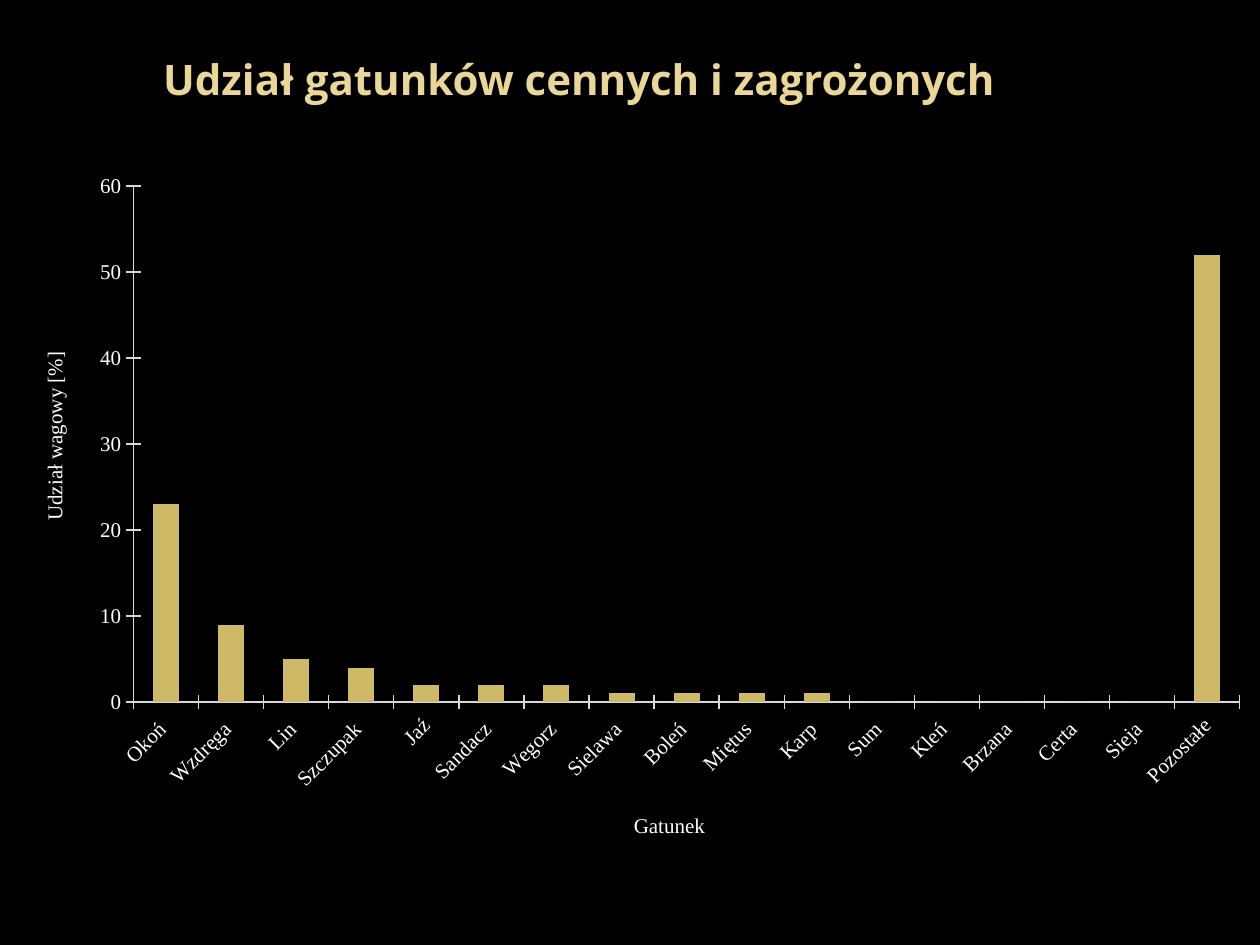
from lxml.etree import SubElement
from pptx import Presentation
from pptx.chart.data import CategoryChartData
from pptx.dml.color import RGBColor
from pptx.enum.chart import XL_CHART_TYPE, XL_TICK_LABEL_POSITION, XL_TICK_MARK
from pptx.enum.text import MSO_ANCHOR, PP_ALIGN
from pptx.oxml import parse_xml
from pptx.oxml.ns import nsdecls, qn
from pptx.util import Inches, Pt

COLORS = {
    "background": "000000",
    "heading": "EAD696",
    "label": "FFFFFF",
    "axis": "D9D9D9",
    "bar": "CEB966",
}
SHARES = {
    "Okoń ": 23, "Wzdręga ": 9, "Lin ": 5, "Szczupak ": 4, "Jaź": 2,
    "Sandacz ": 2, "Wegorz ": 2, "Sielawa ": 1, "Boleń ": 1, "Miętus ": 1,
    "Karp ": 1, "Sum ": 0, "Kleń ": 0, "Brzana ": 0, "Certa ": 0,
    "Sieja ": 0, "Pozostałe": 52,
}


def color(name):
    return RGBColor.from_string(COLORS[name])


def write(frame, text, *, font, size, fill, bold=False, align=None):
    paragraph = frame.paragraphs[0]
    paragraph.alignment = align
    run = paragraph.add_run()
    run.text = text
    run.font.name = font
    run.font.size = Pt(size)
    run.font.bold = bold
    run.font.color.rgb = color(fill)


def add_heading(slide, text):
    heading = slide.shapes.add_textbox(Inches(0.51), 0, Inches(8.17), Inches(1.25))
    heading.text_frame.word_wrap = True
    heading.text_frame.vertical_anchor = MSO_ANCHOR.MIDDLE
    write(heading.text_frame, text, font="Open Sans", size=24, fill="heading",
          bold=True, align=PP_ALIGN.CENTER)


def place(parent, **settings):
    for old in parent.findall(qn("c:layout")):
        parent.remove(old)
    layout = parse_xml(f"<c:layout {nsdecls('c')}/>")
    manual = SubElement(layout, qn("c:manualLayout"))
    for key, value in settings.items():
        SubElement(manual, qn(f"c:{key}")).set("val", str(value))
    return layout


def format_axis(axis, title, x, y):
    axis.has_major_gridlines = False
    axis.major_tick_mark = XL_TICK_MARK.CROSS
    axis.tick_label_position = XL_TICK_LABEL_POSITION.NEXT_TO_AXIS
    axis.format.line.color.rgb = color("axis")
    axis.format.line.width = Pt(0.75)
    write(axis.axis_title.text_frame, title, font="Times New Roman", size=12, fill="label")
    title_xml = axis.axis_title._element
    title_xml.find(qn("c:tx")).addnext(
        place(title_xml, xMode="edge", yMode="edge", x=x, y=y))


def add_share_chart(slide):
    data = CategoryChartData()
    data.categories = list(SHARES)
    data.add_series("Series 1", list(SHARES.values()))
    chart = slide.shapes.add_chart(
        XL_CHART_TYPE.COLUMN_CLUSTERED, 0, Inches(1.31), Inches(10), Inches(5.39), data).chart
    chart.has_legend = False
    chart.has_title = False
    chart.font.name = "Times New Roman"
    chart.font.size = Pt(12)
    chart.font.color.rgb = color("label")

    columns = chart.plots[0]
    columns.vary_by_categories = False
    columns.gap_width = 150
    bars = columns.series[0]
    bars.invert_if_negative = False
    bars.format.fill.solid()
    bars.format.fill.fore_color.rgb = color("bar")

    species, share = chart.category_axis, chart.value_axis
    format_axis(species, "Gatunek ", 0.5, 0.95)
    format_axis(share, "Udział wagowy [%]", 0.03, 0.27)
    share.axis_title.text_frame._txBody.bodyPr.set("rot", "-5400000")
    share.minimum_scale, share.maximum_scale, share.major_unit = 0, 60, 10
    share.tick_labels.number_format = "0"
    share.tick_labels.number_format_is_linked = False
    species.tick_labels.font.size = Pt(12)
    species._element.txPr.bodyPr.set("rot", "-2700000")

    plot_area = chart._chartSpace.chart.plotArea
    plot_area.insert(0, place(plot_area, layoutTarget="inner", xMode="edge", yMode="edge",
                              x=0.106, y=0.031, w=0.878, h=0.761))


def main():
    deck = Presentation()
    deck.slide_width, deck.slide_height = Inches(10), Inches(7.5)
    slide = deck.slides.add_slide(deck.slide_layouts[6])
    slide.background.fill.solid()
    slide.background.fill.fore_color.rgb = color("background")
    add_heading(slide, "Udział gatunków cennych i zagrożonych")
    add_share_chart(slide)
    deck.save("out.pptx")


if __name__ == "__main__":
    main()
